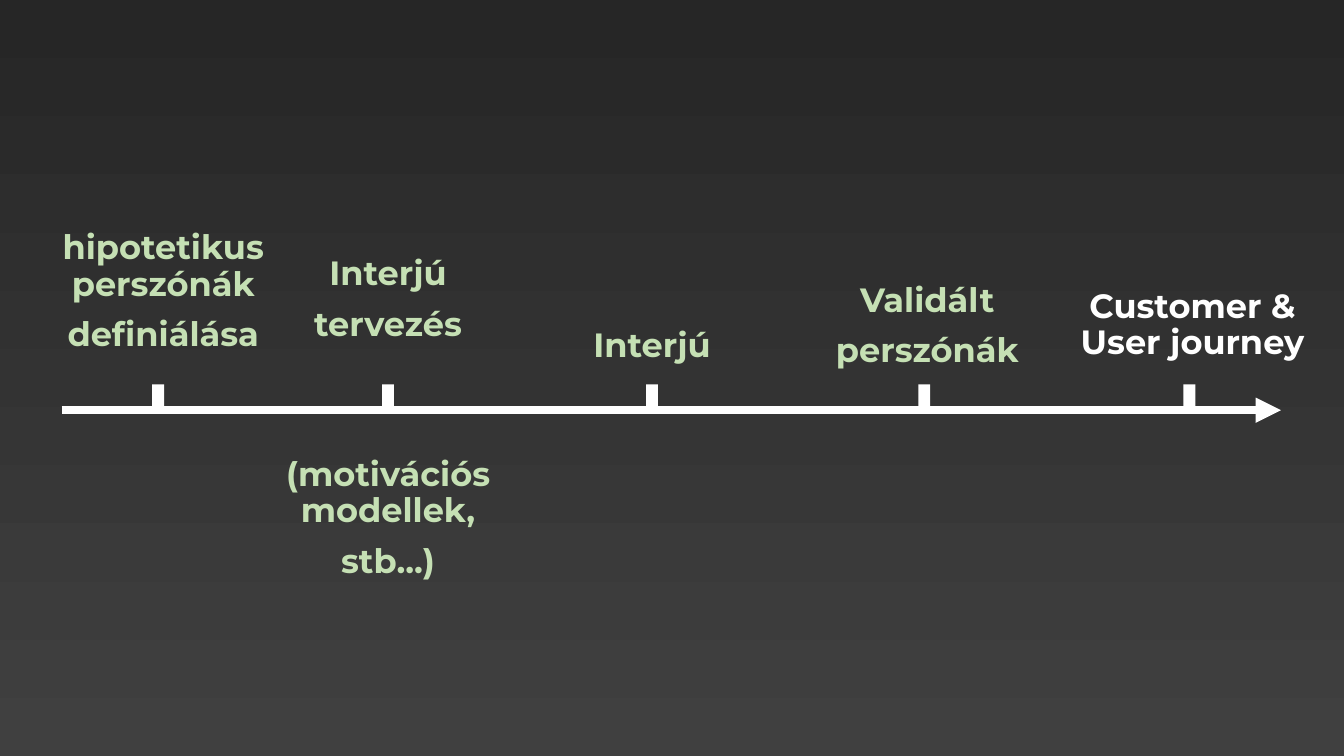
from lxml import etree
from pptx import Presentation
from pptx.dml.color import RGBColor
from pptx.enum.shapes import MSO_CONNECTOR, MSO_SHAPE
from pptx.enum.text import PP_ALIGN
from pptx.oxml.ns import qn
from pptx.util import Pt

STRAIGHT = MSO_CONNECTOR.STRAIGHT
RECTANGLE = MSO_SHAPE.RECTANGLE
CENTER = PP_ALIGN.CENTER

COLORS = {"top": "262626", "bottom": "404040", "white": "FFFFFF", "green": "C5E0B4"}
AXIS_Y = 293
TICK_WIDTH, TICK_HEIGHT = 8.5, 18.5
LABEL_WIDTH = 214.5

# Tick centre, label centre, label top, label height, colour, paragraphs
STEPS = [
    (113, 116.6, 161.3, 111, "green", ["hipotetikus perszónák", "definiálása"]),
    (277.2, 277.2, 180, 72, "green", ["Interjú", "tervezés"]),
    (465.8, 465.8, 231.1, 41, "green", ["Interjú"]),
    (660.2, 662.4, 198.7, 72, "green", ["Validált", "perszónák"]),
    (849.6, 851.8, 203, 67, "white", ["Customer & User journey"]),
]


def color(name):
    return RGBColor.from_string(COLORS[name])


def add_label(center, top, height, color_name, paragraphs):
    box = slide.shapes.add_textbox(
        Pt(center - LABEL_WIDTH / 2), Pt(top), Pt(LABEL_WIDTH), Pt(height))
    frame = box.text_frame
    frame.word_wrap = True
    frame.text = "\n".join(paragraphs)
    for index, paragraph in enumerate(frame.paragraphs):
        paragraph.alignment = CENTER
        paragraph.line_spacing = 0.9
        paragraph.space_before = Pt(10 if index else 0)
        paragraph.font.name = "Montserrat"
        paragraph.font.size = Pt(24)
        paragraph.font.bold = True
        paragraph.font.color.rgb = color(color_name)


deck = Presentation()
deck.slide_width, deck.slide_height = Pt(960), Pt(540)
slide = deck.slides.add_slide(deck.slide_layouts[6])

background = slide.background.fill
background.gradient()
background.gradient_angle = 270
for stop, position, name in zip(background.gradient_stops, (0, 1), ("top", "bottom")):
    stop.position = position
    stop.color.rgb = color(name)

timeline = slide.shapes.add_connector(STRAIGHT, Pt(44), Pt(AXIS_Y), Pt(915), Pt(AXIS_Y))
timeline.line.color.rgb = color("white")
timeline.line.width = Pt(6)
etree.SubElement(timeline.line._get_or_add_ln(), qn("a:tailEnd"), type="triangle")
etree.SubElement(timeline._element.spPr, qn("a:effectLst"))

for tick_center, label_center, top, height, color_name, paragraphs in STEPS:
    tick = slide.shapes.add_shape(
        RECTANGLE, Pt(tick_center - TICK_WIDTH / 2), Pt(AXIS_Y - TICK_HEIGHT),
        Pt(TICK_WIDTH), Pt(TICK_HEIGHT))
    tick.shadow.inherit = False
    tick.fill.solid()
    tick.fill.fore_color.rgb = color("white")
    tick.line.fill.background()
    add_label(label_center, top, height, color_name, paragraphs)

add_label(277.2, 323.3, 111, "green", ["(motivációs modellek,", "stb...)"])

deck.save("out.pptx")
